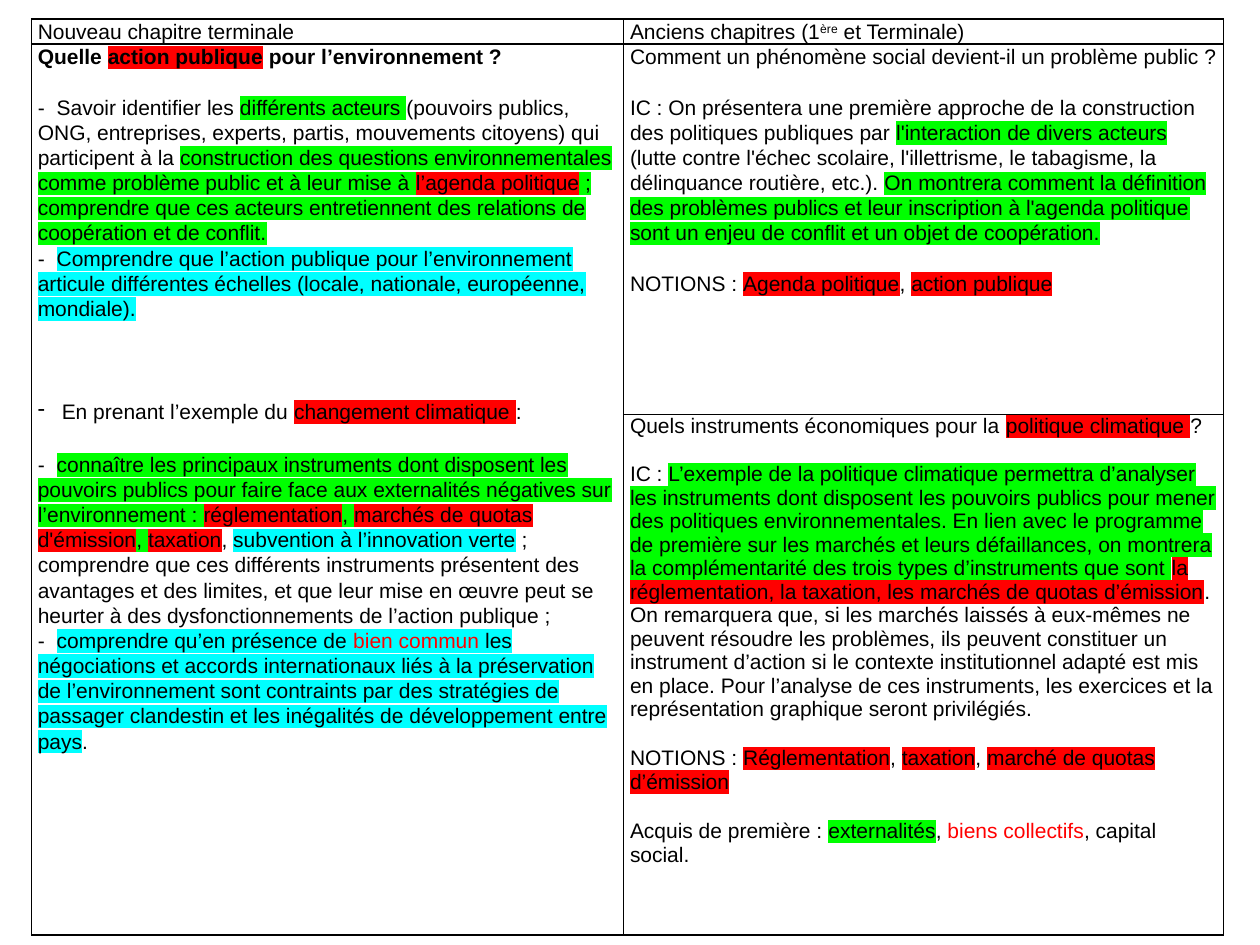
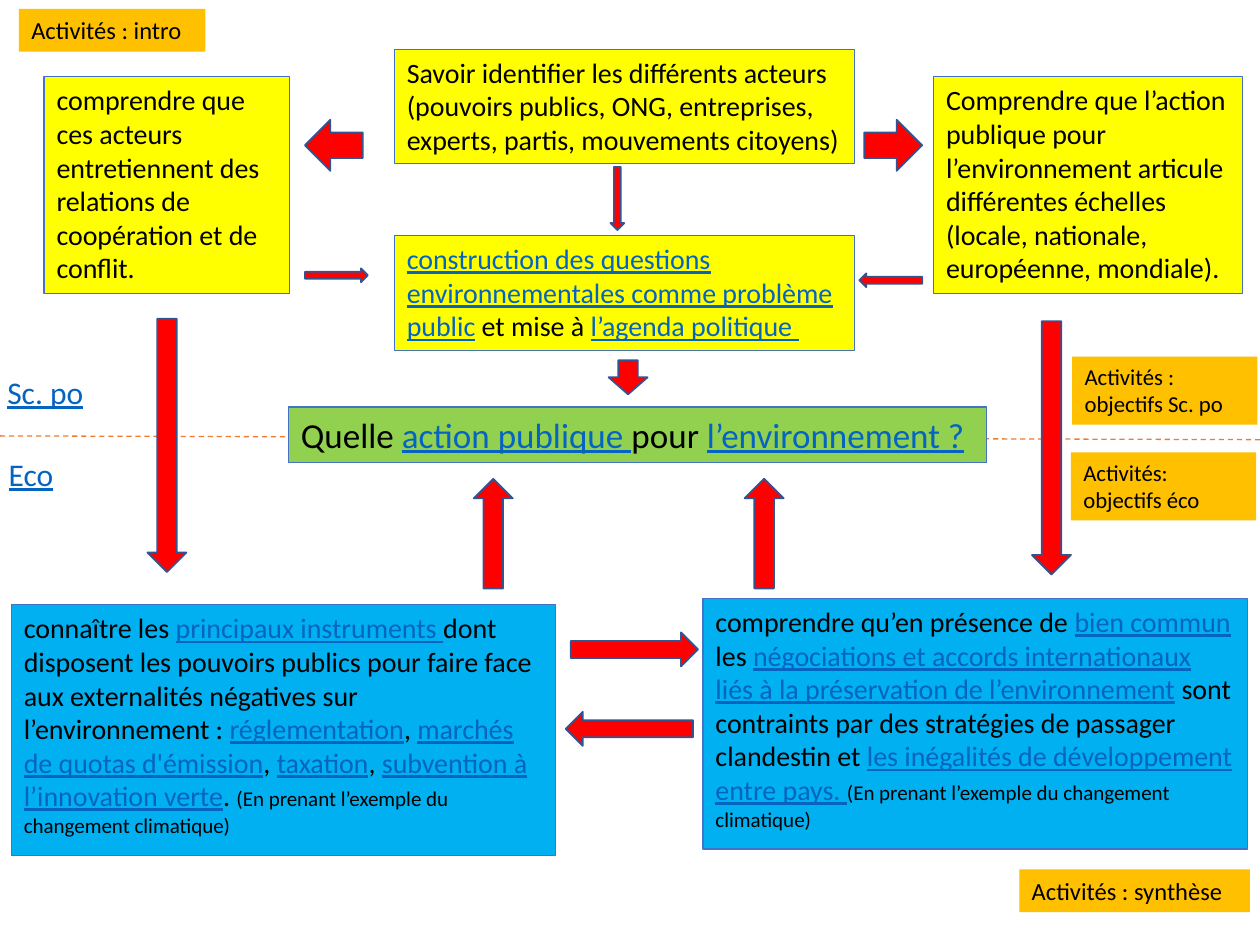
from lxml.etree import SubElement
from pptx import Presentation
from pptx.dml.color import RGBColor
from pptx.enum.dml import MSO_LINE
from pptx.enum.shapes import MSO_CONNECTOR, MSO_SHAPE
from pptx.enum.text import MSO_ANCHOR, PP_ALIGN
from pptx.oxml import parse_xml
from pptx.oxml.ns import qn
from pptx.util import Inches, Pt

COLORS = {
    "black": "000000", "red": "FF0000", "green": "00FF00", "cyan": "00FFFF",
    "link": "0563C1", "yellow": "FFFF00", "lime": "92D050", "sky": "00B0F0",
    "amber": "FFC000", "border": "4472C4", "arrow_edge": "325491", "divider": "ED7D31",
}
MARKS = {
    "red": {"highlight": "red"},
    "green": {"highlight": "green"},
    "cyan": {"highlight": "cyan"},
    "new": {"highlight": "cyan", "color": "red"},
    "warn": {"color": "red"},
    "link": {"color": "link", "underline": True},
    "small": {"size": 12},
    "sup": {"baseline": "30000"},
    "bold": {"bold": True},
    "boldred": {"bold": True, "highlight": "red"},
}
A = 'xmlns:a="http://schemas.openxmlformats.org/drawingml/2006/main"'

prs = Presentation()
prs.slide_width, prs.slide_height = Inches(10), Inches(7.5)
X, Y = prs.slide_width / 100, prs.slide_height / 100  # one percent of the slide


def write(frame, paragraphs, font="Calibri", size=16, spacing=1.0):
    """Fill frame with (space before, text) pairs; |mark:words| formats words by MARKS."""
    frame.word_wrap = True
    for index, (gap, text) in enumerate(paragraphs):
        paragraph = frame.add_paragraph() if index else frame.paragraphs[0]
        paragraph.alignment = PP_ALIGN.LEFT
        paragraph.line_spacing = spacing
        if gap:
            paragraph.space_before = Pt(gap)
        if text.startswith("-\t"):
            tabs = SubElement(paragraph._p.get_or_add_pPr(), qn("a:tabLst"))
            SubElement(tabs, qn("a:tab"), pos=str(Inches(0.15)), algn="l")
        for position, piece in enumerate(text.split("|")):
            mark = {}
            if position % 2:
                name, _, piece = piece.partition(":")
                mark = MARKS[name]
            if not piece:
                continue
            run = paragraph.add_run()
            run.text = piece
            run.font.name = font
            run.font.size = Pt(mark.get("size", size))
            run.font.bold = mark.get("bold", False)
            run.font.underline = mark.get("underline", False)
            run.font.color.rgb = RGBColor.from_string(COLORS[mark.get("color", "black")])
            properties = run._r.get_or_add_rPr()
            if "baseline" in mark:
                properties.set("baseline", mark["baseline"])
            if "highlight" in mark:
                properties.find(qn("a:solidFill")).addnext(parse_xml(
                    f'<a:highlight {A}><a:srgbClr val="{COLORS[mark["highlight"]]}"/></a:highlight>'))


def block(slide, preset, place, fill, edge=None, width=0.75):
    """Add a flat preset shape; place is left, top, width, height in percent of the slide."""
    left, top, wide, high = place
    shape = slide.shapes.add_shape(preset, int(left * X), int(top * Y), int(wide * X), int(high * Y))
    shape.shadow.inherit = False
    shape.fill.solid()
    shape.fill.fore_color.rgb = RGBColor.from_string(COLORS[fill])
    if edge:
        shape.line.color.rgb = RGBColor.from_string(COLORS[edge])
        shape.line.width = Pt(width)
    else:
        shape.line.fill.background()
    shape.text_frame.vertical_anchor = MSO_ANCHOR.TOP
    return shape


# Slide 1: old and new chapters side by side
chapters = prs.slides.add_slide(prs.slide_layouts[6])
columns, rows = (47, 47.6), (2.67, 39.2, 55.07)
comparison = chapters.shapes.add_table(
    3, 2, int(2.5 * X), int(2 * Y), int(sum(columns) * X), int(sum(rows) * Y)).table
comparison.first_row = comparison.horz_banding = False
for column, share in zip(comparison.columns, columns):
    column.width = int(share * X)
for row, share in zip(comparison.rows, rows):
    row.height = int(share * Y)
comparison.cell(1, 0).merge(comparison.cell(2, 0))

for cell in comparison.iter_cells():
    cell.margin_left = cell.margin_right = Inches(0.05)
    cell.margin_top = cell.margin_bottom = 0
    cell.fill.background()
    for index, side in enumerate("LRTB"):
        cell._tc.get_or_add_tcPr().insert(index, parse_xml(
            f'<a:ln{side} {A} w="12700"><a:solidFill><a:srgbClr val="{COLORS["black"]}"/>'
            f'</a:solidFill></a:ln{side}>'))

new_chapter = [
    (0, "|bold:Quelle ||boldred:action publique||bold: pour l’environnement ?|"),
    (14.4, "-\tSavoir identifier les |green:différents acteurs |(pouvoirs publics, ONG, entreprises, "
           "experts, partis, mouvements citoyens) qui participent à la |green:construction des questions "
           "environnementales comme problème public et à leur mise à ||red:l’agenda politique||green: ; "
           "comprendre que ces acteurs entretiennent des relations de coopération et de conflit.|"),
    (0, "-\t|cyan:Comprendre que l’action publique pour l’environnement articule différentes échelles "
        "(locale, nationale, européenne, mondiale).|"),
    (44.4, "En prenant l’exemple du |red:changement climatique |:"),
    (16, "-\t|green:connaître les principaux instruments dont disposent les pouvoirs publics pour faire "
         "face aux externalités négatives sur l’environnement : ||red:réglementation||green:, ||red:marchés "
         "de quotas d'émission||green:, ||red:taxation|, |cyan:subvention à l’innovation verte| ; comprendre "
         "que ces différents instruments présentent des avantages et des limites, et que leur mise en œuvre "
         "peut se heurter à des dysfonctionnements de l’action publique ;"),
    (0, "-\t|cyan:comprendre qu’en présence de ||new:bien commun ||cyan:les négociations et accords "
        "internationaux liés à la préservation de l’environnement sont contraints par des stratégies de "
        "passager clandestin et les inégalités de développement entre pays|."),
]
public_problem = [
    (0, "Comment un phénomène social devient-il un problème public ?"),
    (14.4, "IC : On présentera une première approche de la construction des politiques publiques par "
           "|green:l'interaction de divers acteurs |(lutte contre l'échec scolaire, l'illettrisme, le "
           "tabagisme, la délinquance routière, etc.). |green:On montrera comment la définition des "
           "problèmes publics et leur inscription à l'agenda politique sont un enjeu de conflit et un "
           "objet de coopération.|"),
    (14.4, "NOTIONS : |red:Agenda politique|, |red:action publique|"),
]
climate_policy = [
    (0, "Quels instruments économiques pour la |red:politique climatique |?"),
    (14, "IC : |green:L’exemple de la politique climatique permettra d’analyser les instruments dont "
         "disposent les pouvoirs publics pour mener des politiques environnementales. En lien avec le "
         "programme de première sur les marchés et leurs défaillances, on montrera la complémentarité des "
         "trois types d’instruments que sont ||red:la réglementation, la taxation, les marchés de quotas "
         "d’émission|. On remarquera que, si les marchés laissés à eux-mêmes ne peuvent résoudre les "
         "problèmes, ils peuvent constituer un instrument d’action si le contexte institutionnel adapté est "
         "mis en place. Pour l’analyse de ces instruments, les exercices et la représentation graphique "
         "seront privilégiés."),
    (14.5, "NOTIONS : |red:Réglementation|, |red:taxation|, |red:marché de quotas d’émission|"),
    (15, "Acquis de première : |green:externalités|, |warn:biens collectifs|, capital social."),
]
for row, column, spacing, paragraphs in (
    (0, 0, 1.07, [(0, "Nouveau chapitre terminale")]),
    (0, 1, 1.07, [(0, "Anciens chapitres (1|sup:ère| et Terminale)")]),
    (1, 0, 1.07, new_chapter),
    (1, 1, 1.07, public_problem),
    (2, 1, 1.0, climate_policy),
):
    write(comparison.cell(row, column).text_frame, paragraphs, font="Arial", size=12, spacing=spacing)

climate_example = comparison.cell(1, 0).text_frame.paragraphs[3]._p.get_or_add_pPr()
climate_example.set("marL", str(Inches(0.19)))
climate_example.set("indent", str(-Inches(0.19)))
SubElement(climate_example, qn("a:buChar"), char="-")

# Slide 2: map of the chapter
concept_map = prs.slides.add_slide(prs.slide_layouts[6])
divider = concept_map.shapes.add_connector(
    MSO_CONNECTOR.STRAIGHT, 0, int(46.13 * Y), int(100 * X), int(46.53 * Y))
divider.line.color.rgb = RGBColor.from_string(COLORS["divider"])
divider.line.width = Pt(0.75)
divider.line.dash_style = MSO_LINE.DASH
SubElement(divider._element.spPr, qn("a:effectLst"))

for place, fill, edge, size, text in (
    ((22.9, 43.07, 55.4, 5.87), "lime", "border", 20,
     "Quelle |link:action publique |pour |link:l’environnement ?|"),
    ((31.3, 5.2, 36.5, 12.13), "yellow", "border", 16,
     "Savoir identifier les différents acteurs (pouvoirs publics, ONG, entreprises, experts, partis, "
     "mouvements citoyens)"),
    ((31.3, 24.93, 36.5, 12.13), "yellow", "border", 16,
     "|link:construction des questions environnementales comme problème public| et mise à "
     "|link:l’agenda politique |"),
    ((3.5, 8.13, 19.5, 22.93), "yellow", "border", 16,
     "comprendre que ces acteurs entretiennent des relations de coopération et de conflit."),
    ((74.1, 8.13, 24.5, 22.93), "yellow", "border", 16,
     "Comprendre que l’action publique pour l’environnement articule différentes échelles (locale, "
     "nationale, européenne, mondiale)."),
    ((0.9, 64, 43.2, 26.53), "sky", "border", 16,
     "connaître les |link:principaux instruments |dont disposent les pouvoirs publics pour faire face aux "
     "externalités négatives sur l’environnement : |link:réglementation|, |link:marchés de quotas "
     "d'émission|, |link:taxation|, |link:subvention à l’innovation verte|. |small:(En prenant l’exemple "
     "du changement climatique)|"),
    ((55.8, 63.33, 43.2, 26.53), "sky", "border", 16,
     "comprendre qu’en présence de |link:bien commun |les |link:négociations et accords internationaux "
     "liés à la préservation de l’environnement| sont contraints par des stratégies de passager clandestin "
     "et |link:les inégalités de développement entre pays. ||small:(En prenant l’exemple du changement "
     "climatique)|"),
    ((1.5, 0.93, 14.8, 4.53), "amber", None, 14, "Activités : intro"),
    ((85.1, 37.73, 14.7, 7.2), "amber", None, 13, "Activités : objectifs Sc. po"),
    ((85, 47.87, 14.7, 7.2), "amber", None, 13, "Activités: objectifs éco"),
    ((80.9, 92, 18.3, 4.53), "amber", None, 14, "Activités : synthèse"),
):
    write(block(concept_map, MSO_SHAPE.RECTANGLE, place, fill, edge).text_frame, [(0, text)], size=size)

RIGHT, LEFT = MSO_SHAPE.RIGHT_ARROW, MSO_SHAPE.LEFT_ARROW
UP, DOWN = MSO_SHAPE.UP_ARROW, MSO_SHAPE.DOWN_ARROW
for (wide, high), arrows in (
    ((4.6, 5.4), ((RIGHT, 68.6, 12.67), (LEFT, 24.2, 12.67))),
    ((10.1, 3.6), ((RIGHT, 45.3, 66.93), (LEFT, 44.9, 75.33))),
    ((3.1, 26.8), ((DOWN, 81.9, 34), (DOWN, 11.7, 33.73))),
    ((3.1, 11.6), ((UP, 59.1, 50.67), (UP, 37.6, 50.67))),
    ((5, 1.47), ((RIGHT, 24.2, 28.4), (LEFT, 68.2, 28.93))),
    ((1.1, 6.67), ((DOWN, 48.45, 17.67),)),
    ((3.1, 3.6), ((DOWN, 48.3, 38.13),)),
):
    for direction, left, top in arrows:
        block(concept_map, direction, (left, top, wide, high), "red", "arrow_edge", 1)

for field, left, top, wide in (("Sc. po", -0.4, 38.8, 8.6), ("Eco", -0.3, 47.47, 5.7)):
    label = concept_map.shapes.add_textbox(int(left * X), int(top * Y), int(wide * X), int(5.33 * Y))
    write(label.text_frame, [(0, f"|link:{field}|")], size=18)

prs.save("out.pptx")
